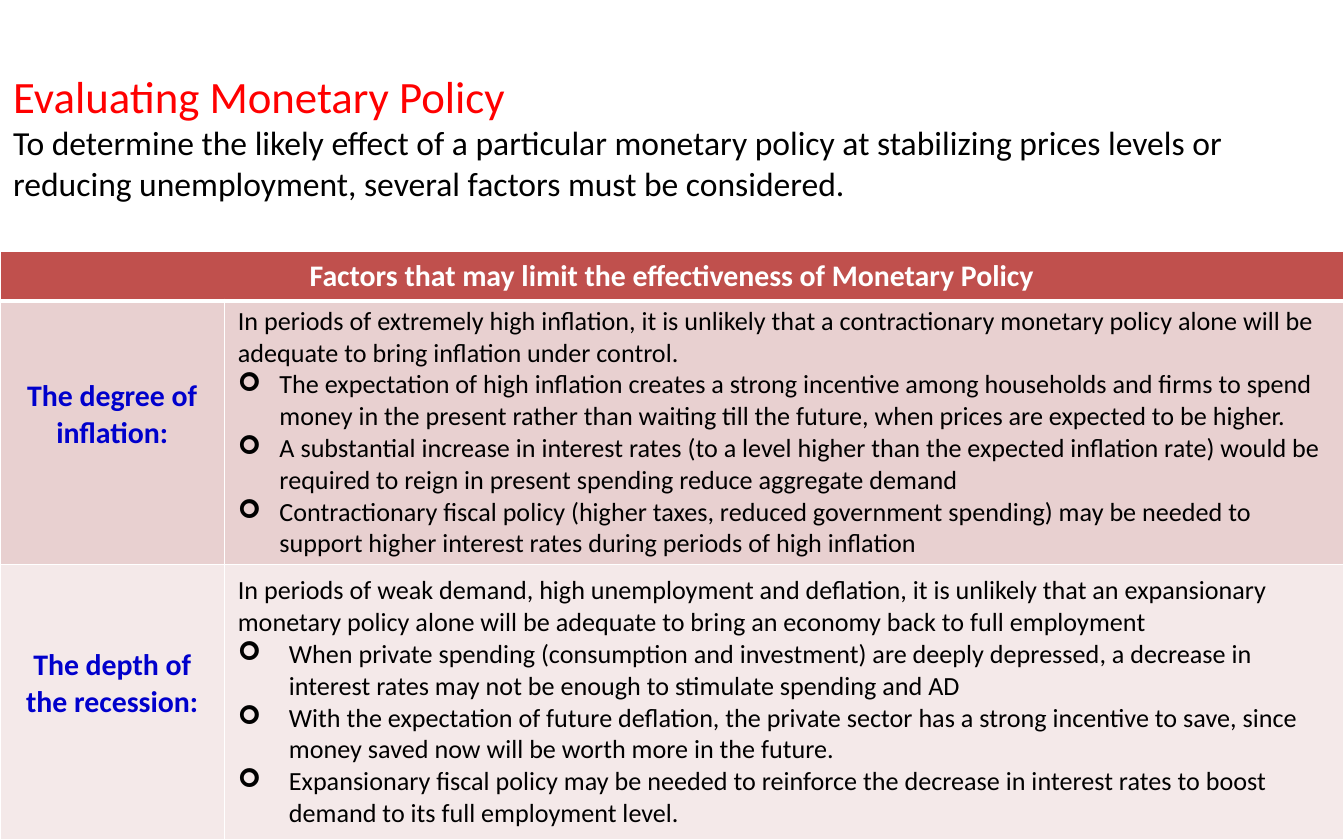
from lxml import etree
from pptx import Presentation
from pptx import util as u
from pptx.dml.color import RGBColor
from pptx.enum import text
from pptx.oxml.ns import qn

COLORS = {"title": "FF0000", "body": "000000", "label": "0000CC", "white": "FFFFFF",
          "header": "C0504D", "inflation": "E8D0D0", "recession": "F4E9E9"}
FONT = "Calibri"

TITLE = "Evaluating Monetary Policy"
INTRO = ("To determine the likely effect of a particular monetary policy at stabilizing prices "
         "levels or reducing unemployment, several factors must be considered.")
HEADER = "Factors that may limit the effectiveness of Monetary Policy"
FACTORS = [
    {"label": "The degree of inflation:", "fill": "inflation", "indent": 0.31,
     "lead": "In periods of extremely high inflation, it is unlikely that a contractionary "
             "monetary policy alone will be adequate to bring inflation under control.",
     "points": [
         "The expectation of high inflation creates a strong incentive among households and firms "
         "to spend money in the present rather than waiting till the future, when prices are "
         "expected to be higher.",
         "A substantial increase in interest rates (to a level higher than the expected inflation "
         "rate) would be required to reign in present spending reduce aggregate demand",
         "Contractionary fiscal policy (higher taxes, reduced government spending) may be needed "
         "to support higher interest rates during periods of high inflation"]},
    {"label": "The depth of the recession:", "fill": "recession", "indent": 0.38,
     "lead": "In periods of weak demand, high unemployment and deflation, it is unlikely that an "
             "expansionary monetary policy alone will be adequate to bring an economy back to "
             "full employment",
     "points": [
         "When private spending (consumption and investment) are deeply depressed, a decrease in "
         "interest rates may not be enough to stimulate spending and AD",
         "With the expectation of future deflation, the private sector has a strong incentive to "
         "save, since money saved now will be worth more in the future.",
         "Expansionary fiscal policy may be needed to reinforce the decrease in interest rates to "
         "boost demand to its full employment level."]},
]
COLUMNS = [1.67, 8.33]
ROWS = [0.37, 1.96, 2.05]
TABLE_TOP = 1.87


def rgb(name):
    return RGBColor.from_string(COLORS[name])


def write(para, words, size, color, bold=False, center=False, indent=None):
    para.text = words
    if center:
        para.alignment = text.PP_ALIGN.CENTER
    if indent:
        props = para._p.get_or_add_pPr()
        props.set("marL", str(u.Inches(indent)))
        props.set("indent", str(-u.Inches(indent)))
        etree.SubElement(props, qn("a:buFont"), typeface="Wingdings")
        etree.SubElement(props, qn("a:buChar"), char="➢")
    font = para.font
    font.name, font.size, font.bold = FONT, u.Pt(size), bold
    font.color.rgb = rgb(color)


def style_cell(cell, fill, bottom_width=1, bottom_margin=0.03):
    cell.fill.solid()
    cell.fill.fore_color.rgb = rgb(fill)
    cell.vertical_anchor = text.MSO_ANCHOR.MIDDLE
    cell.margin_top = u.Inches(0.03)
    cell.margin_bottom = u.Inches(bottom_margin)
    props = cell._tc.get_or_add_tcPr()
    for place, side in enumerate("LRTB"):
        width = bottom_width if side == "B" else 1
        line = etree.Element(qn(f"a:ln{side}"), w=str(u.Pt(width)))
        solid = etree.SubElement(line, qn("a:solidFill"))
        etree.SubElement(solid, qn("a:srgbClr"), val=COLORS["white"])
        props.insert(place, line)


deck = Presentation()
deck.slide_width, deck.slide_height = u.Inches(10), u.Inches(6.25)
page = deck.slides.add_slide(deck.slide_layouts[6])

# Title and introduction
box = page.shapes.add_textbox(u.Inches(0), u.Inches(0.46), u.Inches(10), u.Inches(1.11))
frame = box.text_frame
frame.word_wrap = True
write(frame.paragraphs[0], TITLE, 24, "title")
write(frame.add_paragraph(), INTRO, 18, "body")

# Table grid
table = page.shapes.add_table(len(ROWS), len(COLUMNS), u.Inches(0), u.Inches(TABLE_TOP),
                              u.Inches(sum(COLUMNS)), u.Inches(sum(ROWS))).table
for column, width in zip(table.columns, COLUMNS):
    column.width = u.Inches(width)
for row, height in zip(table.rows, ROWS):
    row.height = u.Inches(height)

# Header across both columns
for cell in table.rows[0].cells:
    style_cell(cell, "header", bottom_width=3)
header = table.cell(0, 0)
header.merge(table.cell(0, 1))
write(header.text_frame.paragraphs[0], HEADER, 16, "white", bold=True, center=True)

# One row per factor; labels sit slightly above the middle
for number, factor in enumerate(FACTORS, start=1):
    label, detail = table.rows[number].cells
    style_cell(label, factor["fill"], bottom_margin=0.3)
    style_cell(detail, factor["fill"])
    write(label.text_frame.paragraphs[0], factor["label"], 16, "label", bold=True, center=True)
    write(detail.text_frame.paragraphs[0], factor["lead"], 14, "body")
    for point in factor["points"]:
        write(detail.text_frame.add_paragraph(), point, 14, "body", indent=factor["indent"])

deck.save("out.pptx")
